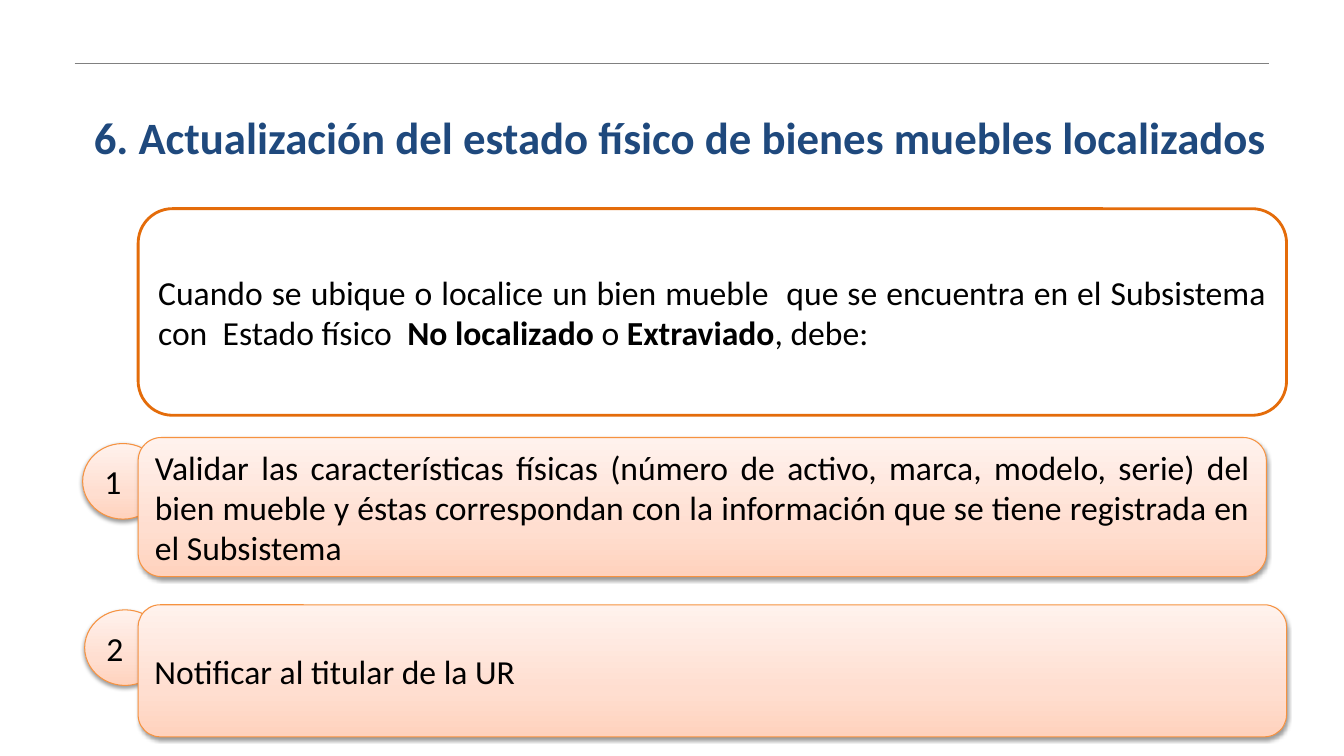
"""Build the slide on updating the physical state of located assets."""
import copy

import lxml.etree
import pptx
import pptx.dml.color
import pptx.enum.shapes
import pptx.enum.text
import pptx.oxml.ns
import pptx.util

Inches = pptx.util.Inches
Pt = pptx.util.Pt
RGBColor = pptx.dml.color.RGBColor
SHAPE = pptx.enum.shapes.MSO_SHAPE
ALIGN = pptx.enum.text.PP_ALIGN
qn = pptx.oxml.ns.qn

BLACK = RGBColor(0x00, 0x00, 0x00)
GRAY = RGBColor(0x80, 0x80, 0x80)
NAVY = RGBColor(0x1F, 0x49, 0x7D)
DARK_ORANGE = RGBColor(0xE4, 0x6C, 0x0A)
ORANGE = RGBColor(0xF6, 0x92, 0x40)
PEACH_STOPS = [
    (0, RGBColor(0xFF, 0xD2, 0xBD)),
    (0.35, RGBColor(0xFF, 0xDE, 0xD0)),
    (1, RGBColor(0xFF, 0xF2, 0xED)),
]
FONT = "Calibri"

TITLE = "6. Actualización del estado físico de bienes muebles localizados"
INTRO = [
    ("Cuando se ubique o localice un bien mueble  que se encuentra en el "
     "Subsistema con  Estado físico  ", False),
    ("No localizado ", True),
    ("o ", False),
    ("Extraviado", True),
    (", debe:", False),
]
STEPS = [
    {"number": "1", "circle": (0.82, 4.4), "box": (1.37, 4.34, 11.19, 1.38),
     "text": "Validar las características físicas (número de activo, marca, "
             "modelo, serie) del bien mueble y éstas correspondan con la "
             "información que se tiene registrada en el Subsistema"},
    {"number": "2", "circle": (0.84, 6.05), "box": (1.37, 6, 11.39, 1.31),
     "text": "Notificar al titular de la UR"},
]
CIRCLE_SIZE = (0.8, 0.75)


def write(shape, runs, alignment, size=24, color=BLACK, bold=None):
    frame = shape.text_frame
    frame.word_wrap = True
    frame.vertical_anchor = pptx.enum.text.MSO_ANCHOR.MIDDLE
    paragraph = frame.paragraphs[0]
    paragraph.alignment = alignment
    font = paragraph.font
    font.name, font.size, font.bold = FONT, Pt(size), bold
    font.color.rgb = color
    for text, strong in runs:
        run = paragraph.add_run()
        run.text = text
        if strong:
            run.font.bold = True


def add_outlined(slide, kind, place, line_color, line_width):
    shape = slide.shapes.add_shape(kind, *map(Inches, place))
    shape.shadow.inherit = False
    shape.fill.background()
    shape.line.color.rgb = line_color
    shape.line.width = Pt(line_width)
    return shape


def add_peach(slide, kind, place):
    shape = add_outlined(slide, kind, place, ORANGE, 0.75)
    shape.fill.gradient()
    shape.fill.gradient_angle = 90
    properties = shape._element.spPr
    stop_list = properties.find(qn("a:gradFill")).find(qn("a:gsLst"))
    stop_list.append(copy.deepcopy(stop_list[-1]))
    for stop, (position, color) in zip(shape.fill.gradient_stops, PEACH_STOPS):
        stop.position = position
        stop.color.rgb = color
    shadow = lxml.etree.SubElement(
        properties.find(qn("a:effectLst")), qn("a:outerShdw"),
        blurRad=str(Pt(3.1)), dist=str(Pt(1.6)), dir="5400000", rotWithShape="0")
    shade = lxml.etree.SubElement(shadow, qn("a:srgbClr"), val=str(BLACK))
    lxml.etree.SubElement(shade, qn("a:alpha"), val="38000")
    return shape


def main():
    presentation = pptx.Presentation()
    presentation.slide_width = Inches(13.33)
    presentation.slide_height = Inches(7.5)
    slide = presentation.slides.add_slide(presentation.slide_layouts[6])

    rule = slide.shapes.add_connector(
        pptx.enum.shapes.MSO_CONNECTOR.STRAIGHT,
        *map(Inches, (0.74, 0.63, 12.59, 0.63)))
    rule.line.color.rgb = GRAY
    rule.line.width = Pt(0.75)
    lxml.etree.SubElement(rule._element.spPr, qn("a:effectLst"))

    title = slide.shapes.add_textbox(*map(Inches, (0.74, 0.63, 12.02, 1.46)))
    write(title, [(TITLE, False)], ALIGN.CENTER, 32, NAVY, True)

    intro = add_outlined(slide, SHAPE.ROUNDED_RECTANGLE,
                         (1.37, 2.07, 11.39, 2.05), DARK_ORANGE, 2)
    write(intro, INTRO, ALIGN.JUSTIFY)

    for step in STEPS:
        circle = add_peach(slide, SHAPE.FLOWCHART_CONNECTOR,
                           step["circle"] + CIRCLE_SIZE)
        write(circle, [(step["number"], False)], ALIGN.LEFT)
        box = add_peach(slide, SHAPE.ROUNDED_RECTANGLE, step["box"])
        write(box, [(step["text"], False)], ALIGN.JUSTIFY)

    presentation.save("out.pptx")


if __name__ == "__main__":
    main()
